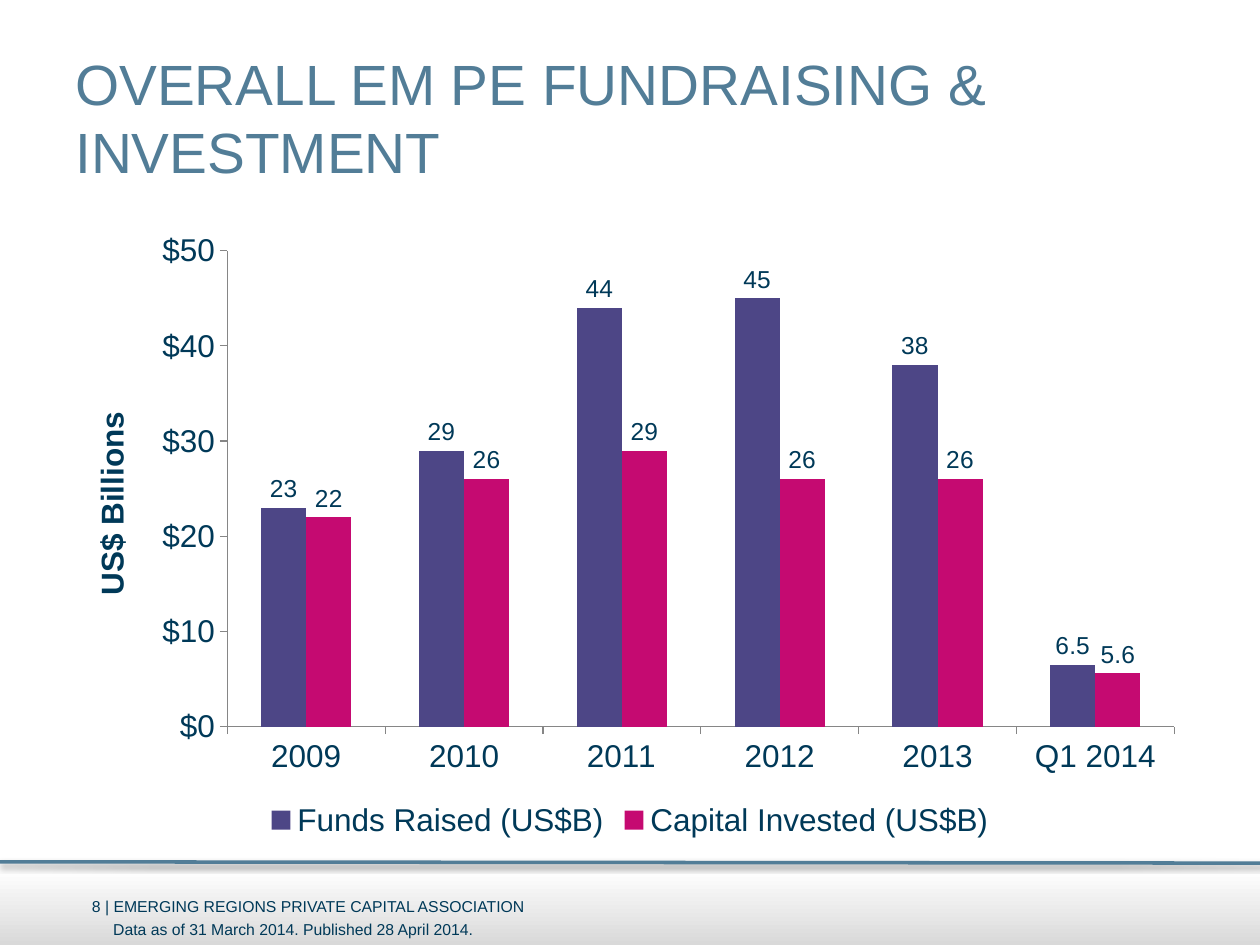
from lxml import etree
from pptx import Presentation
from pptx.chart.data import CategoryChartData
from pptx.dml.color import RGBColor
from pptx.enum.chart import (XL_CHART_TYPE, XL_LABEL_POSITION,
                             XL_LEGEND_POSITION, XL_TICK_MARK)
from pptx.enum.shapes import MSO_CONNECTOR, MSO_SHAPE
from pptx.enum.text import MSO_ANCHOR
from pptx.oxml import parse_xml
from pptx.oxml.ns import nsdecls
from pptx.util import Inches, Pt

COLUMNS = XL_CHART_TYPE.COLUMN_CLUSTERED
OUT_END = XL_LABEL_POSITION.OUTSIDE_END
BOTTOM = XL_LEGEND_POSITION.BOTTOM
OUTSIDE = XL_TICK_MARK.OUTSIDE
STRAIGHT = MSO_CONNECTOR.STRAIGHT
RECT = MSO_SHAPE.RECTANGLE
TOP, MIDDLE = MSO_ANCHOR.TOP, MSO_ANCHOR.MIDDLE

NAVY = RGBColor(0x00, 0x39, 0x58)
STEEL = RGBColor(0x52, 0x7D, 0x97)
PURPLE = RGBColor(0x4D, 0x46, 0x86)
PINK = RGBColor(0xC5, 0x0A, 0x71)
SILVER = RGBColor(0xD9, 0xD9, 0xD9)
WHITE = RGBColor(0xFF, 0xFF, 0xFF)
GREY = RGBColor(0x86, 0x86, 0x86)
FONT = "Arial"

YEARS = ["2009", "2010", "2011", "2012", "2013", "Q1 2014"]
SERIES = [
    ("Funds Raised (US$B)", (23, 29, 44, 45, 38, 6.5), PURPLE),
    ("Capital Invested (US$B)", (22, 26, 29, 26, 26, 5.6), PINK),
]


def set_font(font, size, color):
    """Apply the slide typeface with a size and colour."""
    font.name, font.size = FONT, Pt(size)
    font.color.rgb = color


def add_text(slide, box, text, size, color, anchor=TOP, left=0.1):
    """Add a wrapped one-paragraph text box."""
    frame = slide.shapes.add_textbox(*map(Inches, box)).text_frame
    frame.word_wrap = True
    frame.vertical_anchor = anchor
    frame.margin_left = Inches(left)
    para = frame.paragraphs[0]
    para.text = text
    set_font(para.font, size, color)


def add_band(slide):
    """Add the shaded footer band."""
    band = slide.shapes.add_shape(RECT, *map(Inches, (0, 6.69, 10, 0.81)))
    band.shadow.inherit = False
    band.line.fill.background()
    band.fill.gradient()
    band.fill.gradient_angle = 90
    stops = zip(band.fill.gradient_stops, (0, 0.74), (SILVER, WHITE))
    for stop, place, color in stops:
        stop.position = place
        stop.color.rgb = color


def add_rule(slide):
    """Add the footer rule with its soft shadow."""
    ends = map(Inches, (0, 6.84, 10.01, 6.85))
    rule = slide.shapes.add_connector(STRAIGHT, *ends)
    rule.line.color.rgb = STEEL
    rule.line.width = Pt(2)
    effects = parse_xml(f"<a:effectLst {nsdecls('a')}/>")
    shadow = etree.SubElement(
        effects, effects.tag.replace("effectLst", "outerShdw"),
        blurRad="40000", dist="20000", dir="5400000", rotWithShape="0")
    color = etree.SubElement(
        shadow, effects.tag.replace("effectLst", "srgbClr"), val="000000")
    etree.SubElement(
        color, effects.tag.replace("effectLst", "alpha"), val="38000")
    rule._element.spPr.append(effects)


def style_axis(axis):
    """Give an axis outer ticks, a thin grey line and no grid."""
    axis.has_major_gridlines = False
    axis.major_tick_mark = OUTSIDE
    axis.format.line.color.rgb = GREY
    axis.format.line.width = Pt(0.75)
    set_font(axis.tick_labels.font, 18, NAVY)


def add_columns(slide):
    """Add the chart of funds raised and capital invested."""
    data = CategoryChartData()
    data.categories = YEARS
    for name, values, _ in SERIES:
        data.add_series(name, values)
    box = map(Inches, (0.5, 1.75, 9, 4.95))
    chart = slide.shapes.add_chart(COLUMNS, *box, data).chart
    set_font(chart.font, 18, NAVY)
    chart.has_title = False
    chart.has_legend = True
    chart.legend.position = BOTTOM
    chart.legend.include_in_layout = False
    set_font(chart.legend.font, 18, NAVY)

    style_axis(chart.category_axis)
    axis = chart.value_axis
    style_axis(axis)
    axis.minimum_scale, axis.maximum_scale, axis.major_unit = 0, 50, 10
    axis.tick_labels.number_format = '"$"#,##0'
    axis.tick_labels.number_format_is_linked = False
    para = axis.axis_title.text_frame.paragraphs[0]
    para.text = "US$ Billions"
    set_font(para.font, 18, NAVY)
    para.font.bold = True

    plot = chart.plots[0]
    plot.vary_by_categories = False
    plot.gap_width, plot.overlap = 75, 0
    plot.gap_width = 150
    for series, (_, _, color) in zip(plot.series, SERIES):
        series.format.fill.solid()
        series.format.fill.fore_color.rgb = color
        labels = series.data_labels
        labels.show_value = True
        labels.position = OUT_END
        labels.number_format = "[<10]0.0;0"
        labels.number_format_is_linked = False
        set_font(labels.font, 14, NAVY)


def main():
    """Build and save the slide."""
    deck = Presentation()
    deck.slide_width, deck.slide_height = Inches(10), Inches(7.5)
    slide = deck.slides.add_slide(deck.slide_layouts[6])
    add_band(slide)
    add_rule(slide)
    add_text(slide, (0.73, 7.07, 6.68, 0.25),
             "8 | EMERGING REGIONS PRIVATE CAPITAL ASSOCIATION",
             9, NAVY, MIDDLE, 0)
    add_text(slide, (0.5, 0.3, 9, 1.25),
             "OVERALL EM PE FUNDRAISING & INVESTMENT", 32.4, STEEL, MIDDLE)
    add_columns(slide)
    add_text(slide, (0.8, 7.25, 3.54, 0.25),
             "Data as of 31 March 2014. Published 28 April 2014.", 9, NAVY)
    deck.save("out.pptx")


if __name__ == "__main__":
    main()
